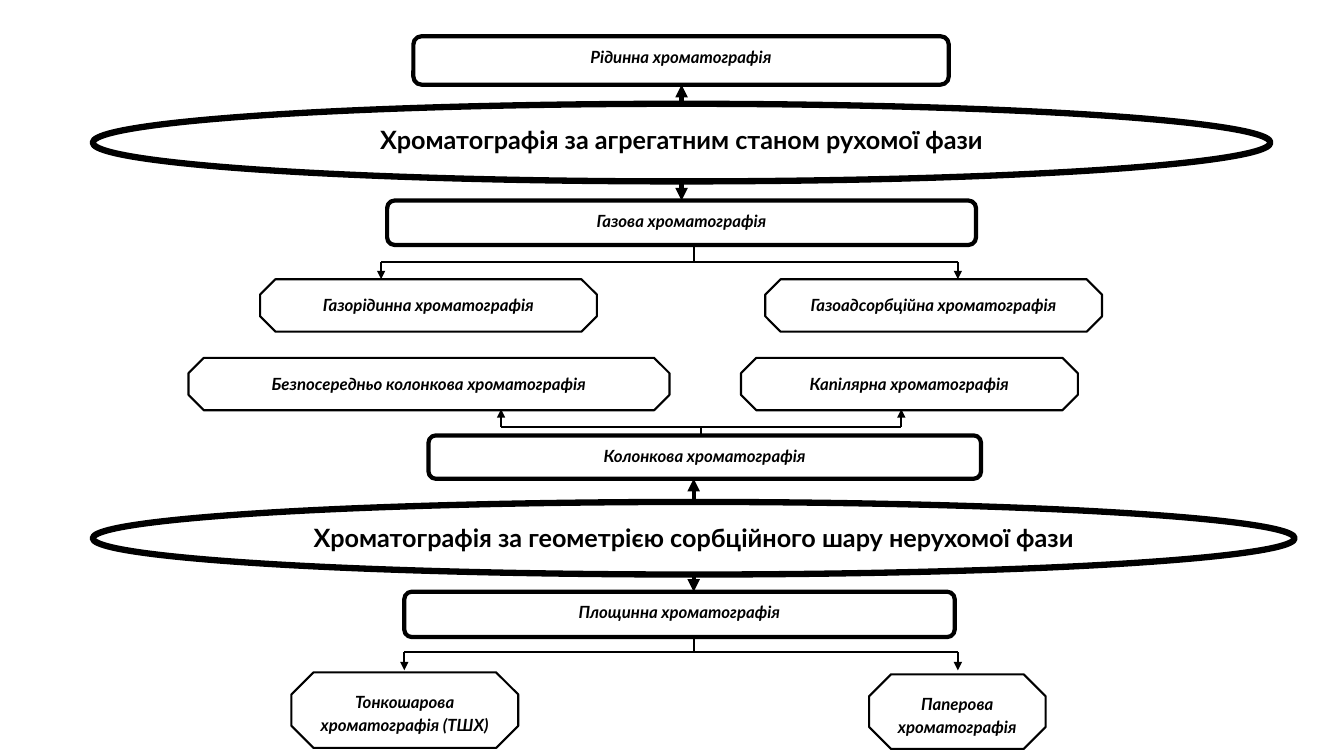
from lxml import etree
from pptx import Presentation
from pptx.dml.color import RGBColor
from pptx.enum.shapes import MSO_CONNECTOR, MSO_SHAPE
from pptx.enum.text import MSO_ANCHOR, PP_ALIGN
from pptx.oxml.ns import qn
from pptx.util import Inches, Pt

BLACK, WHITE = "000000", "FFFFFF"

# Each box: text, left, top, width, height
CRITERIA = [
    ("Хроматографія за агрегатним станом рухомої фази", 0.92, 1.03, 11.68, 0.77),
    ("Хроматографія за геометрією сорбційного шару нерухомої фази", 0.92, 4.98, 11.92, 0.72),
]
KINDS = [
    ("Рідинна хроматографія", 4.1, 0.36, 5.31, 0.48),
    ("Газова хроматографія", 3.84, 1.99, 5.84, 0.44),
    ("Колонкова хроматографія", 4.25, 4.32, 5.48, 0.43),
    ("Площинна хроматографія", 4.01, 5.87, 5.46, 0.45),
]
SUBKINDS = [
    ("Газорідинна хроматографія", 2.58, 2.77, 3.34, 0.52),
    ("Газоадсорбційна хроматографія", 7.59, 2.77, 3.34, 0.52),
    ("Безпосередньо колонкова хроматографія", 1.87, 3.55, 4.77, 0.52),
    ("Капілярна хроматографія", 7.35, 3.55, 3.34, 0.52),
    ("Тонкошарова хроматографія (ТШХ)", 2.89, 6.67, 2.25, 0.75),
    ("Паперова хроматографія", 8.62, 6.69, 1.75, 0.74),
]
# Thick arrows from a criterion to a kind: x, start y, end y
ARROWS = [(6.76, 1.03, 0.84), (6.76, 1.8, 1.99), (6.88, 4.98, 4.75), (6.88, 5.69, 5.87)]
# Forks from a kind to two subkinds: stem x, stem y, bar y, left x, right x, tip y
FORKS = [
    (6.88, 2.43, 2.6, 3.78, 9.5, 2.77),
    (6.95, 4.33, 4.24, 4.97, 8.94, 4.06),
    (6.88, 6.3, 6.47, 4.01, 9.5, 6.65),
]


def color(hex_string):
    return RGBColor.from_string(hex_string)


def write_text(shape, text, size=12, italic=True):
    frame = shape.text_frame
    frame.word_wrap = True
    frame.vertical_anchor = MSO_ANCHOR.TOP
    paragraph = frame.paragraphs[0]
    paragraph.text = text
    paragraph.alignment = PP_ALIGN.CENTER
    paragraph.line_spacing = 1.15
    font = paragraph.runs[0].font
    font.name, font.size = "Lato", Pt(size)
    font.bold, font.italic = True, italic
    font.color.rgb = color(BLACK)


def add_box(slide, preset, box, line_width, adjustment=None, **text_format):
    text, *bounds = box
    shape = slide.shapes.add_shape(preset, *map(Inches, bounds))
    shape.shadow.inherit = False
    if adjustment is not None:
        shape.adjustments[0] = adjustment
    shape.fill.solid()
    shape.fill.fore_color.rgb = color(WHITE)
    shape.line.color.rgb = color(BLACK)
    shape.line.width = Pt(line_width)
    write_text(shape, text, **text_format)


def add_line(slide, x1, y1, x2, y2, width=1.5, arrow=False):
    ends = map(Inches, (x1, y1, x2, y2))
    connector = slide.shapes.add_connector(MSO_CONNECTOR.STRAIGHT, *ends)
    connector.line.color.rgb = color(BLACK)
    connector.line.width = Pt(width)
    if arrow:
        etree.SubElement(connector.line._get_or_add_ln(), qn("a:tailEnd"), type="triangle")
    etree.SubElement(connector._element.spPr, qn("a:effectLst"))


def main():
    presentation = Presentation()
    presentation.slide_width, presentation.slide_height = Inches(13.33), Inches(7.5)
    slide = presentation.slides.add_slide(presentation.slide_layouts[6])

    # Boxes of the three levels
    for box in CRITERIA:
        add_box(slide, MSO_SHAPE.OVAL, box, 4.5, size=18, italic=False)
    for box in KINDS:
        add_box(slide, MSO_SHAPE.ROUNDED_RECTANGLE, box, 3, adjustment=0.167)
    for box in SUBKINDS:
        add_box(slide, MSO_SHAPE.OCTAGON, box, 1.5, adjustment=0.293)

    # Arrows between criteria and kinds
    for x, start, end in ARROWS:
        add_line(slide, x, start, x, end, width=3, arrow=True)

    # Forks: stem, bar and two arrows
    for stem_x, stem_y, bar_y, left, right, tip_y in FORKS:
        add_line(slide, stem_x, stem_y, stem_x, bar_y)
        add_line(slide, left, bar_y, right, bar_y)
        for x in (left, right):
            add_line(slide, x, bar_y, x, tip_y, arrow=True)

    presentation.save("out.pptx")


if __name__ == "__main__":
    main()
